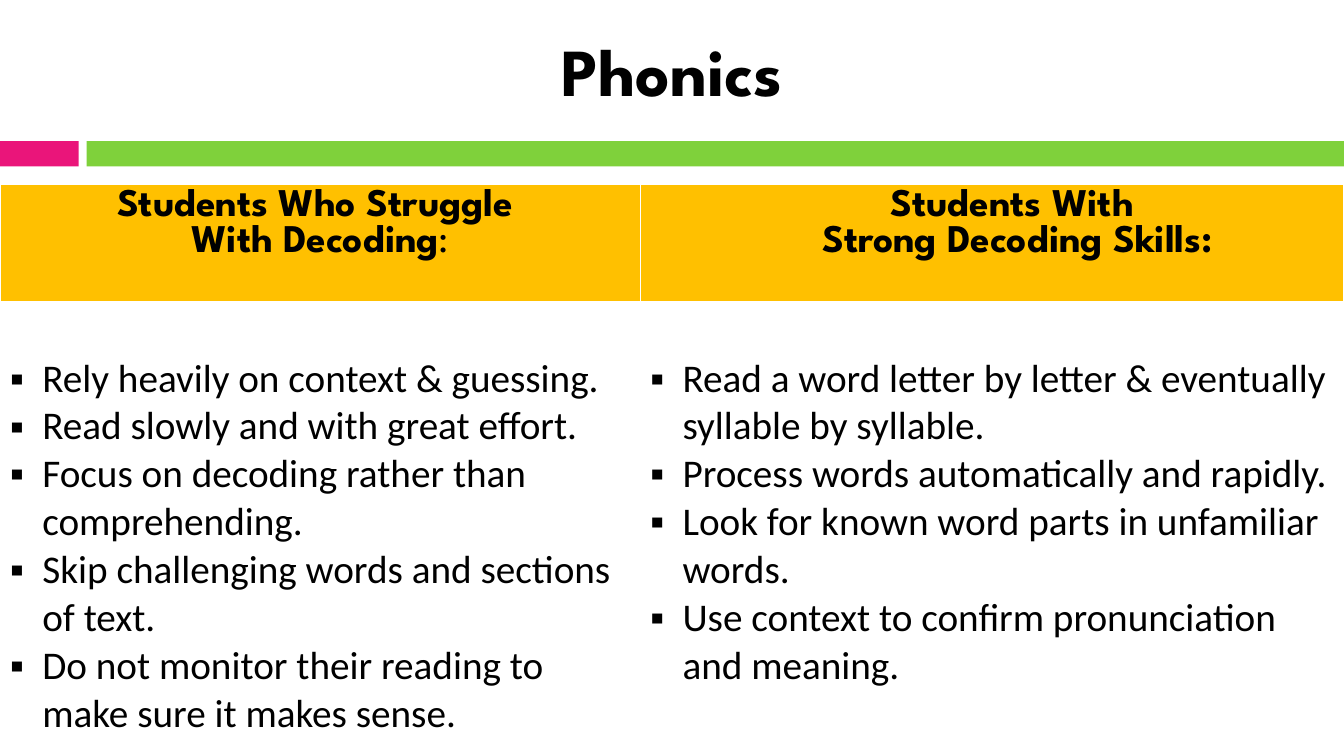
from lxml import etree
from pptx import Presentation
from pptx.dml.color import RGBColor
from pptx.enum.shapes import MSO_SHAPE
from pptx.enum.text import MSO_ANCHOR, PP_ALIGN
from pptx.oxml.ns import qn
from pptx.util import Inches, Pt

CENTER = PP_ALIGN.CENTER
MIDDLE = MSO_ANCHOR.MIDDLE
RECTANGLE = MSO_SHAPE.RECTANGLE

WIDTH, HEIGHT = 13.33, 7.5
HEADING_FONT, BODY_FONT = "League Spartan", "Calibri"
TABLE_TOP = 1.83
COLUMN_WIDTHS = [6.35, 6.98]
ROW_HEIGHTS = [1.16, 5.93]
BULLET_INDENT = 0.32

STRIPES = [(0, 0.78, "EA157A"), (0.86, WIDTH - 0.86, "7FD13B")]
COLUMNS = [
    (
        0,
        [["Students Who Struggle "], ["With Decoding", ":"]],
        [
            "Rely heavily on context & guessing.",
            "Read slowly and with great effort.",
            "Focus on decoding rather than\vcomprehending.",
            "Skip challenging words and sections\vof text.",
            "Do not monitor their reading to\vmake sure it makes sense.",
        ],
    ),
    (
        0.5,
        [["Students With "], ["Strong Decoding Skills:"]],
        [
            "Read a word letter by letter & eventually\vsyllable by syllable.",
            "Process words automatically and rapidly.",
            "Look for known word parts in unfamiliar\vwords.",
            "Use context to confirm pronunciation\vand meaning.",
        ],
    ),
]


def color(value):
    return RGBColor.from_string(value)


def style(font, name, size, bold):
    font.name = name
    font.size = Pt(size)
    font.bold = bold
    font.color.rgb = color("000000")


deck = Presentation()
deck.slide_width, deck.slide_height = Inches(WIDTH), Inches(HEIGHT)
page = deck.slides.add_slide(deck.slide_layouts[6])

for left, width, fill in STRIPES:
    stripe = page.shapes.add_shape(
        RECTANGLE, Inches(left), Inches(1.4), Inches(width), Inches(0.25)
    )
    stripe.shadow.inherit = False
    stripe.fill.solid()
    stripe.fill.fore_color.rgb = color(fill)
    stripe.line.fill.background()

title = page.shapes.add_textbox(0, Inches(0.24), Inches(WIDTH), Inches(0.91))
title.text_frame.word_wrap = True
title.text_frame.vertical_anchor = MIDDLE
para = title.text_frame.paragraphs[0]
para.text = "Phonics"
para.alignment = CENTER
style(para.font, HEADING_FONT, 48, True)

table = page.shapes.add_table(
    len(ROW_HEIGHTS), len(COLUMN_WIDTHS), 0, Inches(TABLE_TOP),
    Inches(WIDTH), Inches(sum(ROW_HEIGHTS)),
).table
table.horz_banding = False
for row, height in zip(table.rows, ROW_HEIGHTS):
    row.height = Inches(height)

for index, (heading_indent, heading, points) in enumerate(COLUMNS):
    table.columns[index].width = Inches(COLUMN_WIDTHS[index])
    head, body = table.cell(0, index), table.cell(1, index)
    for cell, fill in [(head, "FFC000"), (body, "FFFFFF")]:
        cell.fill.solid()
        cell.fill.fore_color.rgb = color(fill)

    for number, pieces in enumerate(heading):
        frame = head.text_frame
        para = frame.add_paragraph() if number else frame.paragraphs[0]
        para.alignment = CENTER
        para._p.get_or_add_pPr().set("marL", str(Inches(heading_indent)))
        for piece in pieces:
            span = para.add_run()
            span.text = piece
            style(span.font, HEADING_FONT, 28, piece != ":")

    body.margin_top = Inches(0.53)
    for number, point in enumerate(points):
        frame = body.text_frame
        para = frame.add_paragraph() if number else frame.paragraphs[0]
        para.text = point
        properties = para._p.get_or_add_pPr()
        properties.set("marL", str(Inches(BULLET_INDENT)))
        properties.set("indent", str(-Inches(BULLET_INDENT)))
        etree.SubElement(properties, qn("a:buFont")).set("typeface", BODY_FONT)
        etree.SubElement(properties, qn("a:buChar")).set("char", "▪")
        style(para.font, BODY_FONT, 28, False)

deck.save("out.pptx")
